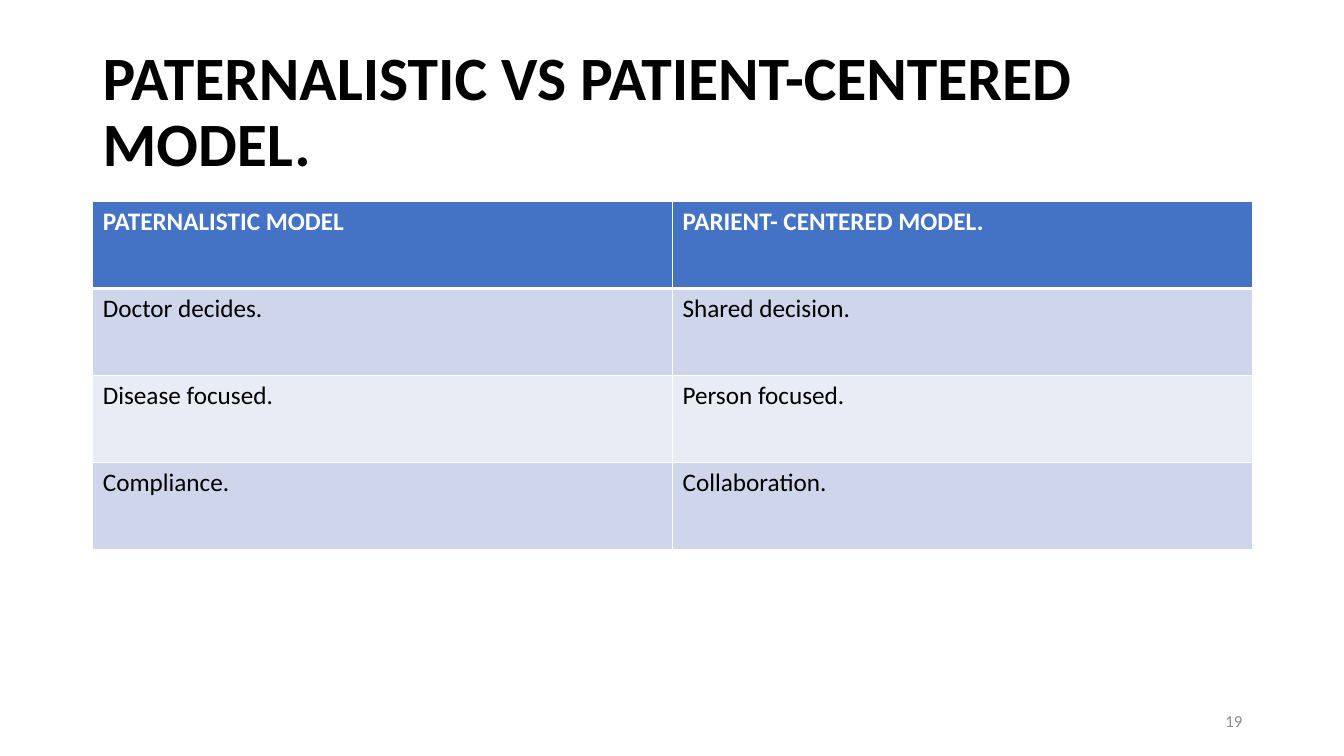
from lxml.etree import SubElement as Sub
from pptx import Presentation
from pptx.dml.color import RGBColor
from pptx.enum.text import MSO_ANCHOR as Anchor, PP_ALIGN as Align
from pptx.oxml.ns import qn
from pptx.util import Inches, Pt

ROWS = [
    ("PATERNALISTIC MODEL", "PARIENT- CENTERED MODEL."),
    ("Doctor decides.", "Shared decision."),
    ("Disease focused.", "Person focused."),
    ("Compliance.", "Collaboration."),
]
HEAD, BANDS = "4472C4", ("E9EBF5", "CFD5EA")


def color(code):
    """Turn a hex string into a colour."""
    return RGBColor.from_string(code)


def style(par, size, code, bold=False):
    """Set the font of every run in a paragraph."""
    for run in par.runs:
        font = run.font
        font.name, font.size, font.bold = "Calibri", Pt(size), bold
        font.color.rgb = color(code)


def add_text(slide, text, box, size, code, bold=False):
    """Add a wrapped, middle-anchored text box and return its paragraph."""
    frame = slide.shapes.add_textbox(*map(Inches, box)).text_frame
    frame.word_wrap = True
    frame.vertical_anchor = Anchor.MIDDLE
    frame.text = text
    par = frame.paragraphs[0]
    style(par, size, code, bold)
    return par


def add_edge(cell, side, width):
    """Draw a white border on one side of a cell."""
    props = cell._tc.get_or_add_tcPr()
    line = Sub(props, qn(f"a:ln{side}"), w=str(Pt(width)))
    Sub(Sub(line, qn("a:solidFill")), qn("a:srgbClr"), val="FFFFFF")


def fill_cell(cell, text, row):
    """Write one cell with its borders, fill and font."""
    head = row == 0
    widths = {"L": 1, "R": 1, "T": 3 if row == 1 else 1, "B": 3 if head else 1}
    for side, width in widths.items():
        add_edge(cell, side, width)
    cell.fill.solid()
    cell.fill.fore_color.rgb = color(HEAD if head else BANDS[row % 2])
    cell.text_frame.text = text
    style(cell.text_frame.paragraphs[0], 18, "FFFFFF" if head else "000000", head)


def add_grid(slide, rows, box):
    """Add the comparison table with equal rows and columns."""
    shape = slide.shapes.add_table(len(rows), len(rows[0]), *map(Inches, box))
    for i, texts in enumerate(rows):
        for j, text in enumerate(texts):
            fill_cell(shape.table.cell(i, j), text, i)


def main():
    """Build the slide and save it."""
    deck = Presentation()
    deck.slide_width, deck.slide_height = Inches(13.33), Inches(7.5)
    slide = deck.slides.add_slide(deck.slide_layouts[6])
    title = add_text(slide, "PATERNALISTIC VS PATIENT-CENTERED MODEL.",
                     (0.92, 0.4, 11.5, 1.45), 44, "000000", True)
    title.line_spacing = 0.9
    add_grid(slide, ROWS, (0.92, 2, 11.5, 3.45))
    number = add_text(slide, "19", (9.42, 6.95, 3, 0.4), 12, "8C8C8C")
    number.alignment = Align.RIGHT
    deck.save("out.pptx")


if __name__ == "__main__":
    main()
